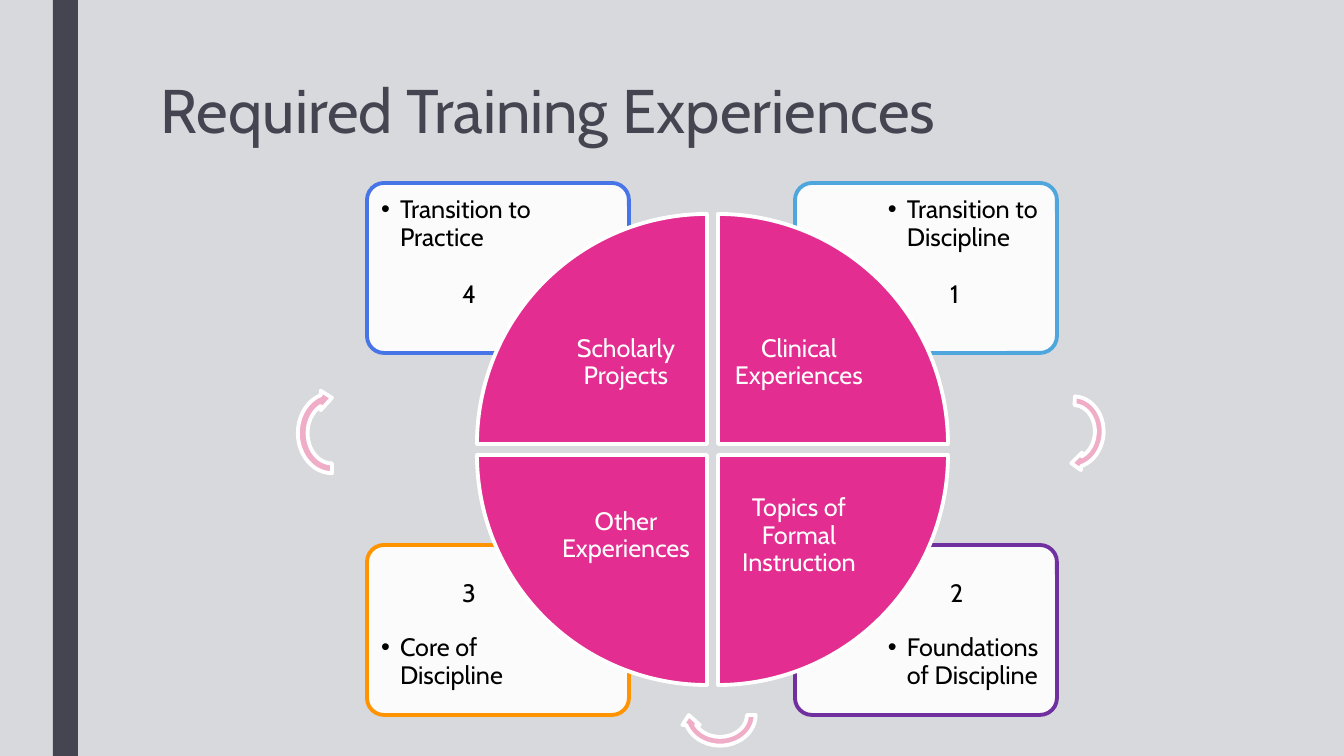
from lxml import etree
from pptx import Presentation
from pptx import util as u
from pptx.dml.color import RGBColor
from pptx.enum import shapes, text
from pptx.oxml.ns import qn

PX = 914400 / 100.8
MSO = shapes.MSO_SHAPE
PP = text.PP_ALIGN


def add_shape(kind, box, fill, line=None, rotation=0):
    sp = s.shapes.add_shape(kind, *[round(v * PX) for v in box])
    sp.shadow.inherit = False
    sp.rotation = rotation
    sp.fill.solid()
    sp.fill.fore_color.rgb = RGBColor.from_string(fill)
    if line:
        sp.line.color.rgb = RGBColor.from_string(line)
        sp.line.width = u.Pt(2.75)
    else:
        sp.line.fill.background()
    return sp


def add_text(words, box, color="000000", size=18, inset=(10, 5), align=PP.LEFT, spacing=1.0):
    tf = s.shapes.add_textbox(*[round(v * PX) for v in box]).text_frame
    tf.word_wrap = True
    tf.margin_left = tf.margin_right = round(inset[0] * PX)
    tf.margin_top = tf.margin_bottom = round(inset[1] * PX)
    tf.text = words
    p = tf.paragraphs[0]
    p.alignment = align
    p.line_spacing = spacing
    r = p.runs[0]
    r.font.name = "Cabin"
    r.font.size = u.Pt(size)
    r.font.color.rgb = RGBColor.from_string(color)
    return tf


prs = Presentation()
prs.slide_width = round(1344 * PX)
prs.slide_height = round(756 * PX)
s = prs.slides.add_slide(prs.slide_layouts[6])
s.background.fill.solid()
s.background.fill.fore_color.rgb = RGBColor.from_string("D8D9DC")

add_shape(MSO.RECTANGLE, (53, 0, 25, 756), "454551")
add_text("Required Training Experiences", (151, 76, 1058, 163), "454551", 44, spacing=0.89)

quadrants = [
    (1, 1, "2", "Foundations of Discipline", "7030A0", "Topics of Formal Instruction", 180),
    (0, 1, "3", "Core of Discipline", "FF9300", "Other Experiences", 270),
    (1, 0, "1", "Transition to Discipline", "4EA6DC", "Clinical Experiences", 90),
    (0, 0, "4", "Transition to Practice", "4775E7", "Scholarly Projects", 0),
]

for col, row, number, phase, outline, topic, turn in quadrants:
    card = add_shape(MSO.ROUNDED_RECTANGLE, (367 + 428 * col, 183 + 362 * row, 262, 170), "FFFFFF", outline)
    card.adjustments[0] = 0.1
    color = card.fill._xPr.find(qn("a:solidFill"))[0]
    etree.SubElement(color, qn("a:alpha"), val="90000")
    tf = add_text(phase, (371 + 507 * col, 187 + 438 * row, 176, 86), inset=(10, 10), spacing=0.9)
    pPr = tf.paragraphs[0]._p.get_or_add_pPr()
    pPr.set("marL", str(round(19 * PX)))
    pPr.set("indent", str(-round(19 * PX)))
    etree.SubElement(pPr, qn("a:buFont"), typeface="Arial")
    etree.SubElement(pPr, qn("a:buChar"), char="•")

for col, row, number, phase, outline, topic, turn in quadrants:
    add_shape(MSO.PIE_WEDGE, (477 + 241 * col, 214 + 241 * row, 230, 230), "E32D91", "FFFFFF", turn)
    tf = add_text(topic, (545 + 173 * col, 282 + 173 * row, 162, 162), "FFFFFF",
                  inset=(14, 14), align=PP.CENTER, spacing=0.9)
    tf.vertical_anchor = text.MSO_ANCHOR.MIDDLE
    add_text(number, (452 + 488 * col, 273 + 299 * row, 36, 40))

for box, turn in [((1033, 397, 80, 70), 93.1), ((680, 680, 80, 70), 180), ((287, 394, 90, 78), 270)]:
    add_shape(MSO.CIRCULAR_ARROW, box, "EFADC7", "FFFFFF", turn)

prs.save("out.pptx")
